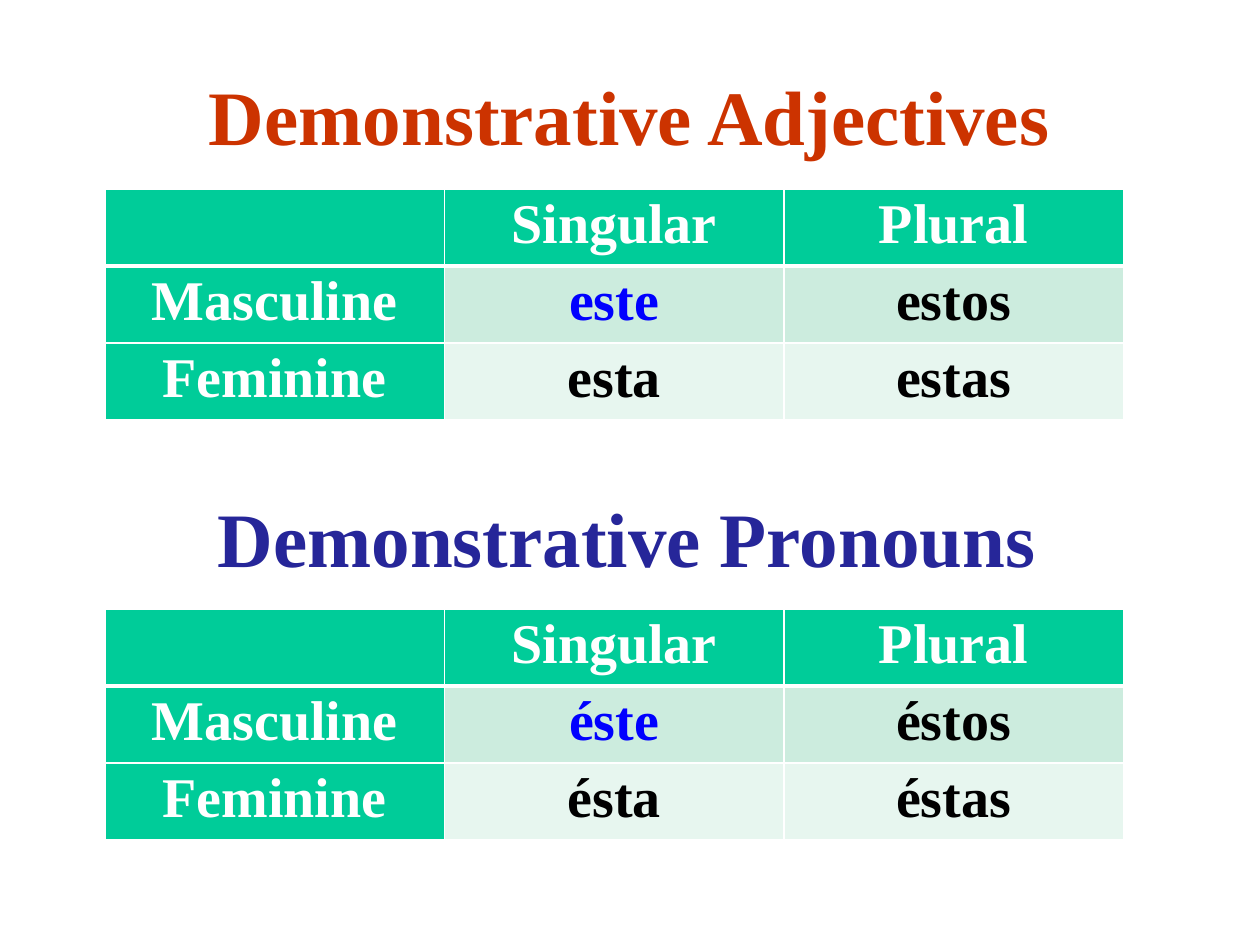
from dataclasses import dataclass

from lxml import etree
from pptx import Presentation
from pptx.dml.color import RGBColor
from pptx.enum.text import MSO_ANCHOR, MSO_AUTO_SIZE, PP_ALIGN
from pptx.oxml.ns import qn
from pptx.util import Pt

CENTER = PP_ALIGN.CENTER
MIDDLE = MSO_ANCHOR.MIDDLE
NO_AUTOFIT = MSO_AUTO_SIZE.NONE
TITLE_ONLY = 5


@dataclass(frozen=True)
class Theme:
    font: str = "Times New Roman"
    heading_size: float = 44
    cell_size: float = 32
    adjectives: str = "CC3300"
    pronouns: str = "262699"
    header: str = "00CC99"
    bands: tuple = ("CCECDE", "E7F6EF")
    white: str = "FFFFFF"
    black: str = "000000"
    highlight: str = "0000FF"


class SlideBuilder:
    def __init__(self, prs, theme):
        self.theme = theme
        self.s = prs.slides.add_slide(prs.slide_layouts[TITLE_ONLY])

    def run(self, p, text, size, color):
        p.alignment = CENTER
        r = p.add_run()
        r.text = text
        r.font.name = self.theme.font
        r.font.size = Pt(size)
        r.font.bold = True
        r.font.color.rgb = RGBColor.from_string(color)

    def heading(self, sp, text, color, left, top, width, height):
        sp.left, sp.top = Pt(left), Pt(top)
        sp.width, sp.height = Pt(width), Pt(height)
        tf = sp.text_frame
        tf.word_wrap = True
        tf.auto_size = NO_AUTOFIT
        tf.vertical_anchor = MIDDLE
        self.run(tf.paragraphs[0], text, self.theme.heading_size, color)

    def title(self, text, color, *box):
        self.heading(self.s.shapes.title, text, color, *box)

    def subtitle(self, text, color, *box):
        sp = self.s.shapes.add_textbox(0, 0, 0, 0)
        self.heading(sp, text, color, *box)

    def borders(self, cell, row):
        widths = {"a:lnL": 1, "a:lnR": 1,
                  "a:lnT": 3 if row == 1 else 1,
                  "a:lnB": 3 if row == 0 else 1}
        tc_pr = cell._tc.get_or_add_tcPr()
        for tag, width in widths.items():
            line = etree.SubElement(tc_pr, qn(tag), w=str(Pt(width)))
            fill = etree.SubElement(line, qn("a:solidFill"))
            etree.SubElement(fill, qn("a:srgbClr"), val=self.theme.white)

    def cell(self, cell, text, row, col):
        theme = self.theme
        is_header = row == 0 or col == 0
        if is_header:
            color = theme.white
        else:
            color = theme.highlight if row == col == 1 else theme.black
        self.borders(cell, row)
        cell.fill.solid()
        background = theme.header if is_header else theme.bands[row - 1]
        cell.fill.fore_color.rgb = RGBColor.from_string(background)
        cell.margin_left = cell.margin_right = Pt(5)
        cell.margin_top = cell.margin_bottom = 0
        if text:
            p = cell.text_frame.paragraphs[0]
            p.line_spacing = 1.07
            p.space_before = p.space_after = Pt(6)
            self.run(p, text, theme.cell_size, color)

    def table(self, rows, left, top, width, height):
        frame = self.s.shapes.add_table(len(rows), len(rows[0]), Pt(left),
                                        Pt(top), Pt(width), Pt(height))
        for i, row in enumerate(rows):
            for j, text in enumerate(row):
                self.cell(frame.table.cell(i, j), text, i, j)


def forms_table(masculine, feminine):
    return [("", "Singular", "Plural"),
            ("Masculine", *masculine),
            ("Feminine", *feminine)]


def main():
    prs = Presentation()
    prs.slide_width, prs.slide_height = Pt(720), Pt(540)
    theme = Theme()
    slide = SlideBuilder(prs, theme)
    slide.title("Demonstrative Adjectives", theme.adjectives,
                49.5, 29, 620.5, 73.5)
    slide.table(forms_table(("este", "estos"), ("esta", "estas")),
                60, 108, 582, 132)
    slide.subtitle("Demonstrative Pronouns", theme.pronouns,
                   48, 270, 620.5, 73.5)
    slide.table(forms_table(("éste", "éstos"), ("ésta", "éstas")),
                60, 348, 582, 132)
    prs.save("out.pptx")


if __name__ == "__main__":
    main()
